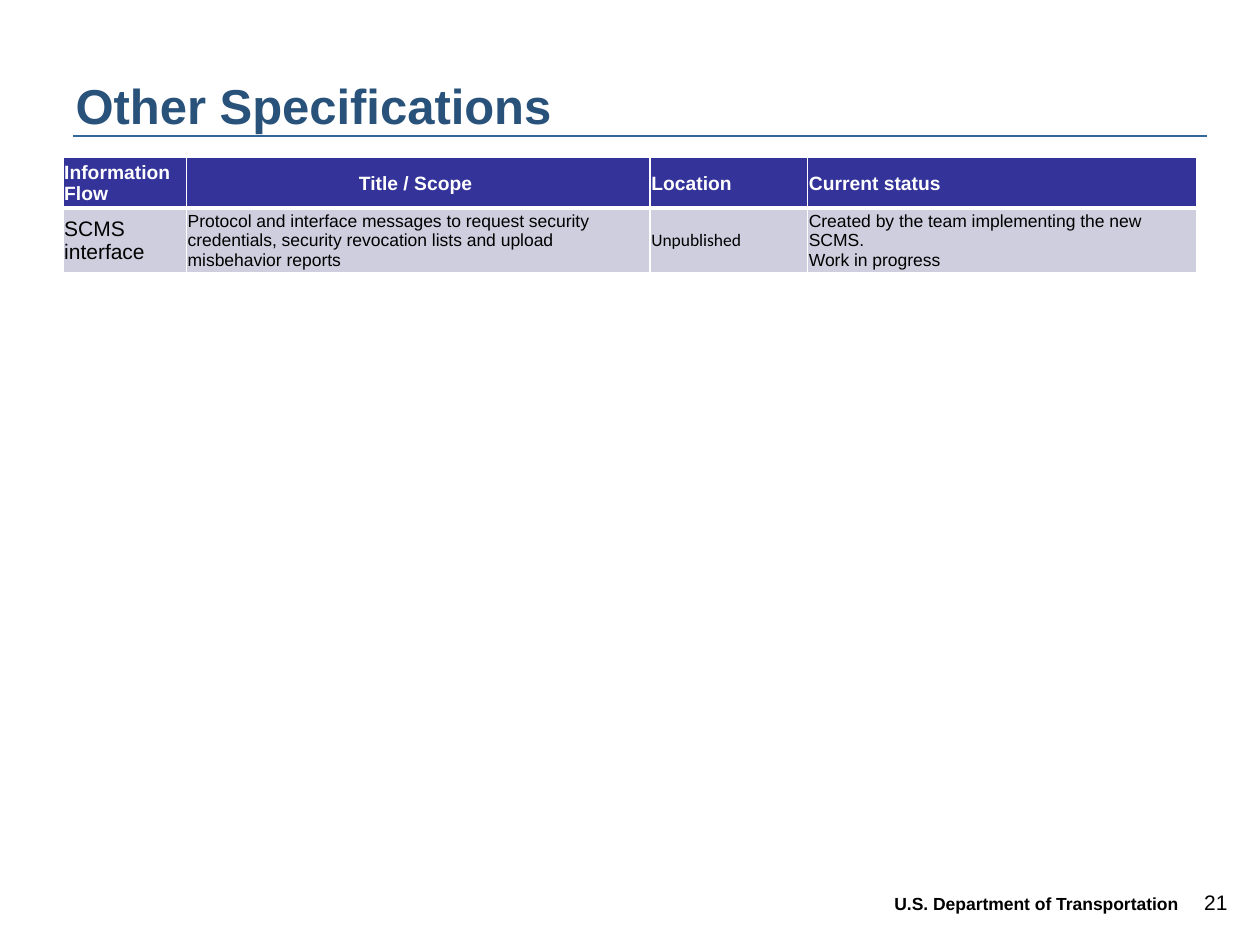
from lxml.etree import SubElement
from pptx import Presentation
from pptx.dml.color import RGBColor
from pptx.enum.shapes import MSO_CONNECTOR
from pptx.enum.text import MSO_ANCHOR as Anchor, PP_ALIGN as Align
from pptx.oxml import parse_xml
from pptx.oxml.ns import nsdecls, qn
from pptx.util import Inches, Pt

TITLE = "Other Specifications"
AGENCY = "U.S. Department of Transportation"
PAGE_NUMBER = "21"
HEADERS = ["Information Flow", "Title / Scope ", "Location", "Current status"]
ENTRIES = [
    "SCMS interface",
    "Protocol and interface messages to request security credentials, "
    "security revocation lists and upload misbehavior reports",
    "Unpublished",
    "Created by the team implementing the new SCMS.\nWork in progress",
]
COLUMN_WIDTHS = [0.98, 3.68, 1.25, 3.09]
ROW_HEIGHTS = [0.4, 0.48]
MARGIN = 0.5
CONTENT_WIDTH = sum(COLUMN_WIDTHS)

HEADER_FORMAT = {"size": 11, "bold": True, "color": "FFFFFF"}
BODY_FORMAT = {"size": 10}
ENTRY_FORMATS = [{"size": 12}, BODY_FORMAT, {"size": 10, "name": "Calibri"}, BODY_FORMAT]


def rgb(value):
    return RGBColor.from_string(value)


def write(frame, text, align=Align.LEFT, color="000000", **font_format):
    frame.word_wrap = True
    frame.text = text
    values = {"name": "Arial", "bold": False} | font_format
    values["size"] = Pt(values["size"])
    for para in frame.paragraphs:
        para.alignment = align
        for span in para.runs:
            for name, value in values.items():
                setattr(span.font, name, value)
            span.font.color.rgb = rgb(color)


def add_label(slide, area, text, **text_format):
    box = slide.shapes.add_textbox(*map(Inches, area))
    write(box.text_frame, text, **text_format)
    return box


def add_borders(cell, bottom_width):
    """Draw white cell borders, placed ahead of the cell's fill."""
    widths = {"lnL": 1, "lnR": 1, "lnT": 1, "lnB": bottom_width}
    properties = cell._tc.get_or_add_tcPr()
    for position, (side, width) in enumerate(widths.items()):
        properties.insert(position, parse_xml(
            f'<a:{side} {nsdecls("a")} w="{Pt(width)}"><a:solidFill>'
            f'<a:srgbClr val="FFFFFF"/></a:solidFill></a:{side}>'))


def style_cell(cell, text, fill, bottom_width, **text_format):
    margins = {"margin_left": 0.01, "margin_right": 0.01,
               "margin_top": 0.01, "margin_bottom": 0}
    for name, value in margins.items():
        setattr(cell, name, Inches(value))
    cell.vertical_anchor = Anchor.MIDDLE
    cell.fill.solid()
    cell.fill.fore_color.rgb = rgb(fill)
    add_borders(cell, bottom_width)
    write(cell.text_frame, text, **text_format)


def add_specifications(slide):
    area = (MARGIN, 1.25, CONTENT_WIDTH, sum(ROW_HEIGHTS))
    table = slide.shapes.add_table(
        len(ROW_HEIGHTS), len(COLUMN_WIDTHS), *map(Inches, area)).table
    for column, width in zip(table.columns, COLUMN_WIDTHS):
        column.width = Inches(width)
    for row, height in zip(table.rows, ROW_HEIGHTS):
        row.height = Inches(height)
    for index, (header, entry) in enumerate(zip(HEADERS, ENTRIES)):
        align = Align.CENTER if index == 1 else Align.LEFT
        style_cell(table.cell(0, index), header, "333399", 3, align=align, **HEADER_FORMAT)
        style_cell(table.cell(1, index), entry, "CECEDE", 1, **ENTRY_FORMATS[index])


def add_title_rule(slide):
    left, top = 0.58, 1.08
    ends = (left, top, left + CONTENT_WIDTH, top)
    rule = slide.shapes.add_connector(MSO_CONNECTOR.STRAIGHT, *map(Inches, ends))
    rule.line.color.rgb = rgb("336699")
    rule.line.width = Pt(1.5)
    SubElement(rule._element.spPr, qn("a:effectLst"))


def main():
    deck = Presentation()
    deck.slide_width, deck.slide_height = Inches(10), Inches(7.5)
    slide = deck.slides.add_slide(deck.slide_layouts[5])

    add_title_rule(slide)
    add_label(slide, (9.42, 7.01, 0.42, 0.3), PAGE_NUMBER, size=12, align=Align.RIGHT)
    agency = add_label(slide, (7, 7.08, 2.75, 0.23), AGENCY, size=10, bold=True)
    agency.text_frame.paragraphs[0].line_spacing = Pt(9)

    title = slide.shapes.title
    title.left, title.top, title.width, title.height = map(
        Inches, (MARGIN, 0.42, CONTENT_WIDTH, 0.83))
    title.text_frame.vertical_anchor = Anchor.MIDDLE
    write(title.text_frame, TITLE, size=28, bold=True, color="29527B")

    add_specifications(slide)
    deck.save("out.pptx")


if __name__ == "__main__":
    main()
